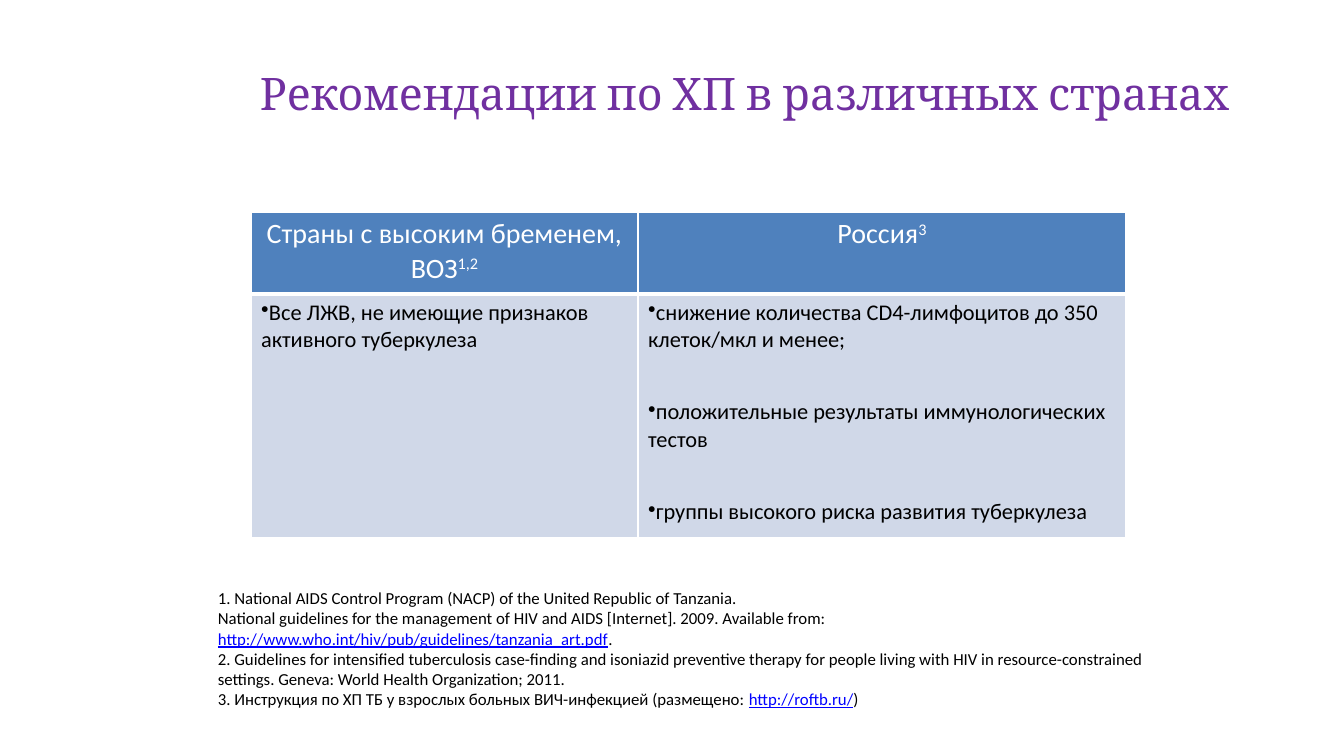
"""Builds a slide on preventive therapy recommendations in different countries."""
import lxml.etree
import pptx
import pptx.dml.color
import pptx.enum.text
import pptx.oxml.ns
import pptx.util

RGB = pptx.dml.color.RGBColor
PURPLE = RGB(0x70, 0x30, 0xA0)
WHITE = RGB(0xFF, 0xFF, 0xFF)
BLACK = RGB(0, 0, 0)
LINK = RGB(0, 0, 0xFF)
HEADER_FILL = RGB(0x4F, 0x81, 0xBD)
BODY_FILL = RGB(0xD0, 0xD8, 0xE8)
ALIGN = pptx.enum.text.PP_ALIGN
ANCHOR = pptx.enum.text.MSO_ANCHOR

SLIDE_SIZE = (1344, 756)
TITLE_AREA = (213, 30, 1064, 126)
TABLE_ORIGIN = (251, 212)
COLUMN_WIDTHS = (387, 488)
ROW_HEIGHTS = (82, 244)
SOURCES_AREA = (208, 583, 946, 132)

TITLE = [[("Рекомендации по ХП в различных странах", "")]]
HEADERS = [
    [[("Страны с высоким бременем, ВОЗ", ""), ("1,2", "super")]],
    [[("Россия", ""), ("3", "super")]],
]
CRITERIA = [
    [[("Все ЛЖВ, не имеющие признаков активного туберкулеза", "")]],
    [
        [("снижение количества CD4-лимфоцитов до 350 клеток/мкл и менее;", "")],
        [("положительные результаты иммунологических тестов", "")],
        [("группы высокого риска развития туберкулеза", "")],
    ],
]
SOURCES = [
    [("1. National AIDS Control Program (NACP) of the United Republic of Tanzania.", "")],
    [
        ("National guidelines for the management of HIV and AIDS [Internet]. 2009. Available from: ", ""),
        ("http://www.who.int/hiv/pub/guidelines/tanzania_art.pdf", "link"),
        (".", ""),
    ],
    [("2. Guidelines for intensified tuberculosis case-finding and isoniazid preventive therapy "
      "for people living with HIV in resource-constrained settings. "
      "Geneva: World Health Organization; 2011.", "")],
    [
        ("3. Инструкция по ХП ТБ у взрослых больных ВИЧ-инфекцией (размещено: ", ""),
        ("http://roftb.ru/", "link"),
        (")", ""),
    ],
]


def px(length):
    return pptx.util.Emu(round(length * 914400 / 100.8))


def write(frame, paragraphs, *, size, color, font="Calibri", align=ALIGN.LEFT, bullet=False, gap=0):
    frame.word_wrap = True
    for index, spans in enumerate(paragraphs):
        para = frame.paragraphs[0] if index == 0 else frame.add_paragraph()
        para.alignment = align
        if index < len(paragraphs) - 1:
            para.space_after = pptx.util.Pt(gap)
        if bullet:
            mark = lxml.etree.SubElement(para._p.get_or_add_pPr(), pptx.oxml.ns.qn("a:buChar"))
            mark.set("char", "•")
        for text, role in spans:
            span = para.add_run()
            span.text = text
            span.font.name = font
            span.font.size = pptx.util.Pt(size)
            span.font.bold = False
            span.font.color.rgb = LINK if role == "link" else color
            if role == "link":
                span.font.underline = True
            if role == "super":
                span._r.get_or_add_rPr().set("baseline", "30000")


def add_text(page, area, paragraphs, anchor=ANCHOR.TOP, **style):
    box = page.shapes.add_textbox(*map(px, area))
    box.text_frame.vertical_anchor = anchor
    write(box.text_frame, paragraphs, **style)


def style_cell(cell, fill, bottom):
    cell.fill.solid()
    cell.fill.fore_color.rgb = fill
    properties = cell._tc.get_or_add_tcPr()
    for index, (side, width) in enumerate((("L", 1), ("R", 1), ("T", 1), ("B", bottom))):
        line = lxml.etree.Element(pptx.oxml.ns.qn("a:ln" + side), w=str(pptx.util.Pt(width)))
        solid = lxml.etree.SubElement(line, pptx.oxml.ns.qn("a:solidFill"))
        lxml.etree.SubElement(solid, pptx.oxml.ns.qn("a:srgbClr"), val=str(WHITE))
        properties.insert(index, line)


def add_recommendations(page):
    size = (sum(COLUMN_WIDTHS), sum(ROW_HEIGHTS))
    table = page.shapes.add_table(
        len(ROW_HEIGHTS), len(COLUMN_WIDTHS), *map(px, TABLE_ORIGIN + size)).table
    table.horz_banding = False
    for row, height in zip(table.rows, ROW_HEIGHTS):
        row.height = px(height)
    for number, width in enumerate(COLUMN_WIDTHS):
        table.columns[number].width = px(width)
        header, body = table.cell(0, number), table.cell(1, number)
        style_cell(header, HEADER_FILL, bottom=3)
        style_cell(body, BODY_FILL, bottom=1)
        write(header.text_frame, HEADERS[number], size=20, color=WHITE, align=ALIGN.CENTER)
        write(body.text_frame, CRITERIA[number], size=16, color=BLACK, bullet=True, gap=32)


def main():
    deck = pptx.Presentation()
    deck.slide_width, deck.slide_height = map(px, SLIDE_SIZE)
    page = deck.slides.add_slide(deck.slide_layouts[6])
    add_text(page, TITLE_AREA, TITLE, anchor=ANCHOR.MIDDLE, size=32, color=PURPLE,
             font="Cambria", align=ALIGN.CENTER)
    add_recommendations(page)
    add_text(page, SOURCES_AREA, SOURCES, size=12, color=BLACK)
    deck.save("out.pptx")


if __name__ == "__main__":
    main()
